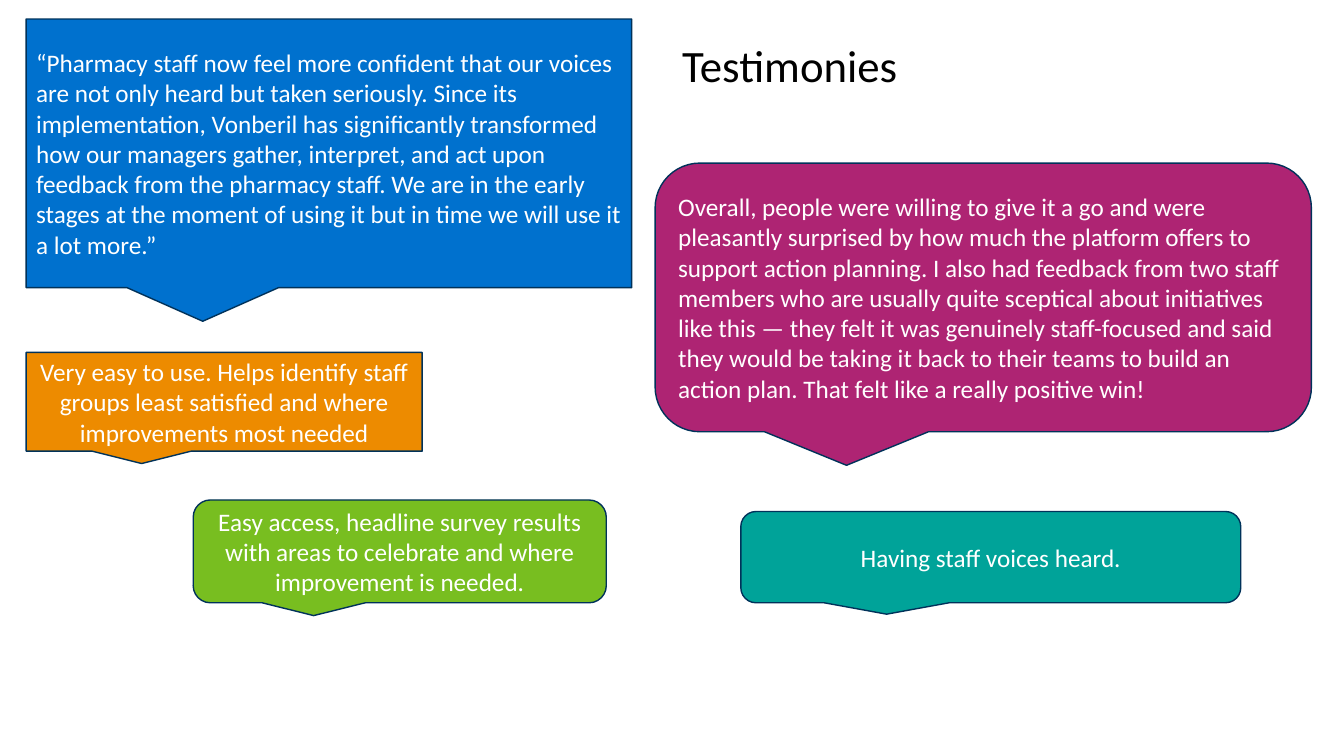
from dataclasses import dataclass
from typing import Any

import pptx
import pptx.dml.color
import pptx.enum.shapes
import pptx.enum.text
import pptx.util

Cm = pptx.util.Cm
Pt = pptx.util.Pt
RGBColor = pptx.dml.color.RGBColor
Kind = pptx.enum.shapes.MSO_SHAPE
Align = pptx.enum.text.PP_ALIGN
Anchor = pptx.enum.text.MSO_ANCHOR

BLUE = RGBColor(0x00, 0x71, 0xCE)
PLUM = RGBColor(0xAE, 0x24, 0x73)
ORANGE = RGBColor(0xED, 0x8B, 0x00)
GREEN = RGBColor(0x78, 0xBE, 0x20)
TEAL = RGBColor(0x00, 0xA3, 0x99)
NAVY = RGBColor(0x00, 0x32, 0x5A)
WHITE = RGBColor(0xFF, 0xFF, 0xFF)
BLACK = RGBColor(0x00, 0x00, 0x00)

SQUARE = Kind.RECTANGULAR_CALLOUT
ROUND = Kind.ROUNDED_RECTANGULAR_CALLOUT


@dataclass
class Quote:
    kind: Any
    box: tuple[float, float, float, float]  # left, top, width, height in cm
    fill: RGBColor
    align: Any
    text: str


QUOTES = [
    Quote(SQUARE, (0.66, 0.48, 15.26, 6.77), BLUE, Align.LEFT,
          "“Pharmacy staff now feel more confident that our voices are not only "
          "heard but taken seriously. Since its implementation, Vonberil has "
          "significantly transformed how our managers gather, interpret, and act "
          "upon feedback from the pharmacy staff. We are in the early stages at "
          "the moment of using it but in time we will use it a lot more.”"),
    Quote(ROUND, (16.51, 4.11, 16.54, 6.77), PLUM, Align.LEFT,
          "Overall, people were willing to give it a go and were pleasantly "
          "surprised by how much the platform offers to support action planning. "
          "I also had feedback from two staff members who are usually quite "
          "sceptical about initiatives like this — they felt it was genuinely "
          "staff-focused and said they would be taking it back to their teams to "
          "build an action plan. That felt like a really positive win!"),
    Quote(SQUARE, (0.66, 8.88, 9.98, 2.49), ORANGE, Align.CENTER,
          "Very easy to use. Helps identify staff groups least satisfied and "
          "where improvements most needed"),
    Quote(ROUND, (4.87, 12.6, 10.41, 2.59), GREEN, Align.CENTER,
          "Easy access, headline survey results with areas to celebrate and "
          "where improvement is needed."),
    Quote(ROUND, (18.67, 12.89, 12.6, 2.3), TEAL, Align.CENTER,
          "Having staff voices heard."),
]


def write(frame: Any, text: str, size: int, color: RGBColor, align: Any) -> None:
    frame.word_wrap = True
    para = frame.paragraphs[0]
    para.alignment = align
    run = para.add_run()
    run.text = text
    for name, value in {"name": "Calibri", "size": Pt(size)}.items():
        setattr(run.font, name, value)
    run.font.color.rgb = color


def draw(slide: Any, quote: Quote) -> None:
    shape = slide.shapes.add_shape(quote.kind, *map(Cm, quote.box))
    shape.shadow.inherit = False
    shape.fill.solid()
    shape.fill.fore_color.rgb = quote.fill
    shape.line.color.rgb = NAVY
    shape.line.width = Pt(1)
    shape.text_frame.vertical_anchor = Anchor.MIDDLE
    write(shape.text_frame, quote.text, 18, WHITE, quote.align)


def main() -> None:
    deck = pptx.Presentation()
    deck.slide_width, deck.slide_height = Cm(33.87), Cm(19.05)
    slide = deck.slides.add_slide(deck.slide_layouts[6])

    # Speech bubbles
    for quote in QUOTES:
        draw(slide, quote)

    # Title
    title = slide.shapes.add_textbox(Cm(16.94), Cm(0.82), Cm(12.07), Cm(1.63))
    write(title.text_frame, "Testimonies", 32, BLACK, Align.LEFT)

    deck.save("out.pptx")


if __name__ == "__main__":
    main()
